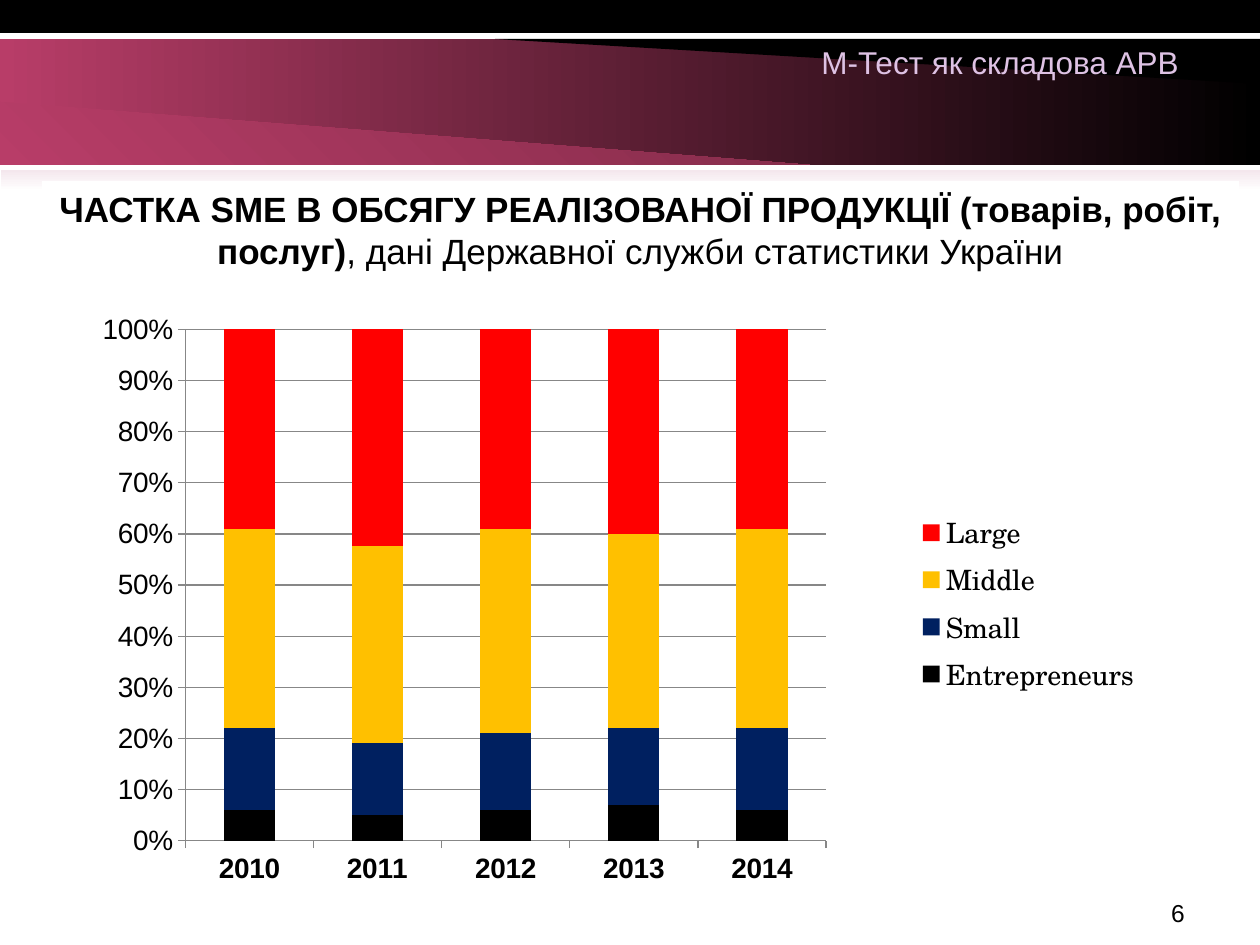
from dataclasses import dataclass

from lxml.etree import SubElement
from pptx import Presentation
from pptx.chart.data import CategoryChartData
from pptx.dml.color import RGBColor
from pptx.enum.chart import XL_CHART_TYPE as ChartType
from pptx.enum.chart import XL_LEGEND_POSITION as LegendPosition
from pptx.enum.chart import XL_TICK_MARK as TickMark
from pptx.enum.shapes import MSO_SHAPE as Shape
from pptx.enum.text import MSO_ANCHOR as Anchor
from pptx.enum.text import PP_ALIGN as Align
from pptx.oxml.ns import qn
from pptx.util import Emu, Pt

EMU_PER_PX = 914400 / 126


@dataclass(frozen=True)
class Theme:
    font: str = "Arial"
    legend_font: str = "TeX Gyre Schola"
    black: str = "000000"
    white: str = "FFFFFF"
    pink: str = "B83D68"
    plum: str = "842C4A"
    blush: str = "F4E7ED"
    lilac: str = "DEC2E4"
    navy: str = "002060"
    amber: str = "FFC000"
    red: str = "FF0000"
    grid: str = "878787"
    title_size: int = 20
    header_size: int = 18
    chart_size: int = 16
    number_size: int = 14


def px(length):
    return Emu(round(length * EMU_PER_PX))


def set_font(font, size, color, name, bold=False):
    font.size, font.name, font.bold = Pt(size), name, bold
    font.color.rgb = RGBColor.from_string(color)


def set_layout(parent, index, fractions, inner=False):
    """Place a chart part by x, y, width and height as fractions of the chart."""
    for old in parent.findall(qn("c:layout")):
        parent.remove(old)
    layout = SubElement(parent, qn("c:layout"))
    parent.insert(index, layout)
    manual = SubElement(layout, qn("c:manualLayout"))
    settings = [("layoutTarget", "inner")] if inner else []
    settings += [("xMode", "edge"), ("yMode", "edge")]
    settings += zip("xywh", map(str, fractions))
    for tag, value in settings:
        SubElement(manual, qn(f"c:{tag}")).set("val", value)


class SlideBuilder:
    """Holds the theme and the current slide."""

    def __init__(self, page, theme):
        self.page, self.theme = page, theme

    def paint(self, shape, colors, angle):
        """Fill with one colour, or a gradient of two at a clockwise angle."""
        shape.shadow.inherit = False
        shape.line.fill.background()
        if len(colors) == 1:
            shape.fill.solid()
            shape.fill.fore_color.rgb = RGBColor.from_string(colors[0])
            return
        shape.fill.gradient()
        shape.fill.gradient_angle = -angle % 360
        for stop, color in zip(shape.fill.gradient_stops, colors):
            stop.color.rgb = RGBColor.from_string(color)

    def rect(self, area, *colors, angle=0):
        shape = self.page.shapes.add_shape(Shape.RECTANGLE, *map(px, area))
        self.paint(shape, colors, angle)
        return shape

    def polygon(self, points, *colors, angle=0):
        start, *rest = [(px(x), px(y)) for x, y in points]
        builder = self.page.shapes.build_freeform(*start)
        builder.add_line_segments(rest)
        self.paint(builder.convert_to_shape(), colors, angle)

    def text(self, area, words, size, color, align=Align.LEFT, wrap=True):
        box = self.page.shapes.add_textbox(*map(px, area))
        box.text_frame.word_wrap = wrap
        para = box.text_frame.paragraphs[0]
        para.text, para.alignment = words, align
        set_font(para.font, size, color, self.theme.font)

    def title(self, area, bold_words, plain_words):
        frame = self.rect(area, self.theme.white).text_frame
        frame.word_wrap, frame.vertical_anchor = True, Anchor.TOP
        para = frame.paragraphs[0]
        para.alignment = Align.CENTER
        for words, bold in ((bold_words, True), (plain_words, False)):
            span = para.add_run()
            span.text = words
            set_font(span.font, self.theme.title_size, self.theme.black,
                     self.theme.font, bold)

    def share_chart(self, area, categories, series):
        theme = self.theme
        data = CategoryChartData()
        data.categories = categories
        for name, _, values in series:
            data.add_series(name, values)
        chart = self.page.shapes.add_chart(
            ChartType.COLUMN_STACKED_100, *map(px, area), data).chart
        set_font(chart.font, theme.chart_size, theme.black, theme.font)
        chart.has_title = False

        plot = chart.plots[0]
        plot.gap_width, plot.overlap, plot.vary_by_categories = 150, 100, False
        for bars, (_, color, _) in zip(plot.series, series):
            bars.format.fill.solid()
            bars.format.fill.fore_color.rgb = RGBColor.from_string(color)

        category_axis, value_axis = chart.category_axis, chart.value_axis
        value_axis.has_major_gridlines = True
        value_axis.tick_labels.number_format = "0%"
        value_axis.tick_labels.number_format_is_linked = False
        for axis in (category_axis, value_axis):
            axis.major_tick_mark = TickMark.OUTSIDE
            axis.minor_tick_mark = TickMark.NONE
            set_font(axis.tick_labels.font, theme.chart_size, theme.black,
                     theme.font, bold=axis is category_axis)
        for part in (category_axis, value_axis, value_axis.major_gridlines):
            part.format.line.color.rgb = RGBColor.from_string(theme.grid)
            part.format.line.width = Pt(0.75)

        chart.has_legend = True
        chart.legend.position = LegendPosition.RIGHT
        chart.legend.include_in_layout = False
        set_font(chart.legend.font, theme.chart_size, theme.black,
                 theme.legend_font)
        root = chart.element
        set_layout(root.find(".//" + qn("c:plotArea")), 0,
                   (0.1, 0.04, 0.57, 0.84), inner=True)
        set_layout(root.find(".//" + qn("c:legend")), 1,
                   (0.74, 0.33, 0.22, 0.32))


def main():
    deck = Presentation()
    deck.slide_width, deck.slide_height = px(1260), px(945)
    theme = Theme()
    slide = SlideBuilder(deck.slides.add_slide(deck.slide_layouts[6]), theme)

    slide.rect((0, 39, 1260, 126), theme.pink, theme.black)
    slide.polygon([(495, 39), (1260, 84), (1260, 39)], theme.black)
    slide.polygon([(0, 102), (810, 165), (0, 165)],
                  theme.pink, theme.plum, angle=315)
    slide.rect((0, 0, 1260, 33), theme.black)
    slide.rect((1, 170, 1259, 21), theme.blush, theme.white, angle=90)

    slide.text((903, 892, 294, 34), "6", theme.number_size, theme.black,
               Align.RIGHT)
    slide.text((809, 37, 387, 50), "М-Тест як складова АРВ",
               theme.header_size, theme.lilac, wrap=False)
    slide.title((42, 181, 1197, 97),
                "ЧАСТКА SME В ОБСЯГУ РЕАЛІЗОВАНОЇ ПРОДУКЦІЇ "
                "(товарів, робіт, послуг)",
                ", дані Державної служби статистики України")
    slide.share_chart(
        (73, 305, 1124, 609),
        ["2010", "2011", "2012", "2013", "2014"],
        [("Entrepreneurs", theme.black, (6, 5, 6, 7, 6)),
         ("Small", theme.navy, (16, 14, 15, 15, 16)),
         ("Middle", theme.amber, (39, 38, 40, 38, 39)),
         ("Large", theme.red, (39, 42, 39, 40, 39))])
    deck.save("out.pptx")


if __name__ == "__main__":
    main()
